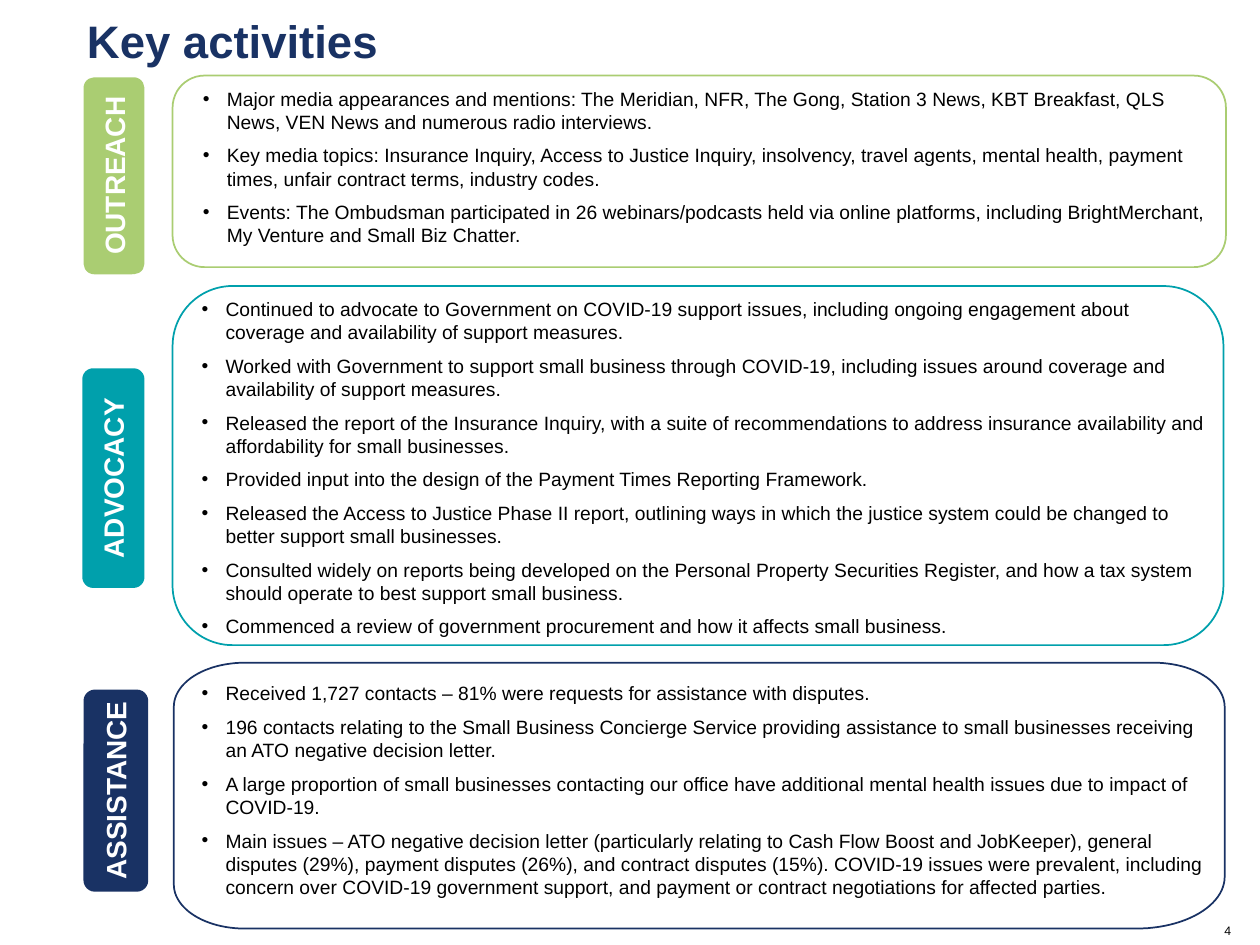
import math

import lxml.etree
import pptx
import pptx.dml.color
import pptx.enum.shapes
import pptx.enum.text
import pptx.oxml.ns
import pptx.util

PX = 9144
ROUND = pptx.enum.shapes.MSO_SHAPE.ROUNDED_RECTANGLE
ALIGN = pptx.enum.text.PP_ALIGN
ANCHOR = pptx.enum.text.MSO_ANCHOR
NAVY, TEAL, GREEN = "193264", "00A0AC", "AACD72"

OUTREACH = [
    "Major media appearances and mentions: The Meridian, NFR, The Gong, Station 3 News, KBT Breakfast, QLS News, VEN News and numerous radio interviews.",
    "Key media topics: Insurance Inquiry, Access to Justice Inquiry, insolvency, travel agents, mental health, payment times, unfair contract terms, industry codes.",
    "Events: The Ombudsman participated in 26 webinars/podcasts held via online platforms, including BrightMerchant, My Venture and Small Biz Chatter.",
]
ADVOCACY = [
    "Continued to advocate to Government on COVID-19 support issues, including ongoing engagement about \ncoverage and availability of support measures.",
    "Worked with Government to support small business through COVID-19, including issues around coverage and availability of support measures.",
    "Released the report of the Insurance Inquiry, with a suite of recommendations to address insurance availability and affordability for small businesses.",
    "Provided input into the design of the Payment Times Reporting Framework.",
    "Released the Access to Justice Phase II report, outlining ways in which the justice system could be changed to better support small businesses.",
    "Consulted widely on reports being developed on the Personal Property Securities Register, and how a tax system should operate to best support small business.",
    "Commenced a review of government procurement and how it affects small business.",
]
ASSISTANCE = [
    "Received 1,727 contacts – 81% were requests for assistance with disputes.",
    "196 contacts relating to the Small Business Concierge Service providing assistance to small businesses receiving an ATO negative decision letter.",
    "A large proportion of small businesses contacting our office have additional mental health issues due to impact of COVID-19.",
    "Main issues – ATO negative decision letter (particularly relating to Cash Flow Boost and JobKeeper), general disputes (29%), payment disputes (26%), and contract disputes (15%). COVID-19 issues were prevalent, including concern over COVID-19 government support, and payment or contract negotiations for affected parties.",
]


def rgb(value):
    """Return a colour from a hex string."""
    return pptx.dml.color.RGBColor.from_string(value)


def place(sp, box):
    """Move and size a shape to a box in px."""
    sp.left, sp.top, sp.width, sp.height = [n * PX for n in box]


def frame(sp, anchor=ANCHOR.TOP):
    """Prepare and return the text frame of a shape."""
    tf = sp.text_frame
    tf.word_wrap = True
    tf.auto_size = pptx.enum.text.MSO_AUTO_SIZE.NONE
    tf.vertical_anchor = anchor
    return tf


def write(p, text, size, color, bold=False, align=ALIGN.LEFT):
    """Write text into a paragraph, breaking lines at newlines."""
    p.alignment = align
    for i, part in enumerate(text.split("\n")):
        if i:
            p.add_line_break()
        r = p.add_run()
        r.text = part
        r.font.name = "Arial"
        r.font.size = pptx.util.Pt(size)
        r.font.bold = bold
        r.font.color.rgb = rgb(color)


def outline(sp, color, fill=None):
    """Give a shape its line and optional fill."""
    sp.shadow.inherit = False
    sp.line.color.rgb = rgb(color)
    sp.line.width = pptx.util.Pt(1)
    if fill:
        sp.fill.solid()
        sp.fill.fore_color.rgb = rgb(fill)
    else:
        sp.fill.background()


def add_label(s, text, box, color):
    """Add a filled tab with upward text centred on it."""
    x, y, w, h = box
    tab = s.shapes.add_shape(ROUND, 0, 0, 0, 0)
    place(tab, box)
    outline(tab, color, color)
    sp = s.shapes.add_textbox(0, 0, 0, 0)
    place(sp, (x + (w - h) // 2, y + (h - 37) // 2, h, 37))
    sp.rotation = 270
    tf = frame(sp, ANCHOR.MIDDLE)
    tf.margin_left = tf.margin_right = 0
    write(tf.paragraphs[0], text, 16, "FFFFFF", True, ALIGN.CENTER)


def add_panel(s, box, color):
    """Add a rounded outline panel."""
    sp = s.shapes.add_shape(ROUND, 0, 0, 0, 0)
    place(sp, box)
    outline(sp, color)


def add_uneven_panel(s, box, color):
    """Add an outline panel whose lower right corner is wider."""
    x, y, w, h = box
    corners = [
        (x + 56, y + 35, 56, 35),
        (x + w - 56, y + 35, 56, 35),
        (x + w - 70, y + h - 41, 70, 41),
        (x + 56, y + h - 35, 56, 35),
    ]
    points = []
    for i, (cx, cy, rx, ry) in enumerate(corners):
        for step in range(25):
            a = math.radians(180 + 90 * i + 90 * step / 24)
            points.append((round((cx + rx * math.cos(a)) * PX), round((cy + ry * math.sin(a)) * PX)))
    fb = s.shapes.build_freeform(*points[0])
    fb.add_line_segments(points[1:], close=True)
    outline(fb.convert_to_shape(), color)


def fill_list(sp, box, items):
    """Place a body placeholder and fill it with bullets."""
    place(sp, box)
    tf = frame(sp)
    for i, item in enumerate(items):
        p = tf.add_paragraph() if i else tf.paragraphs[0]
        pPr = p._p.get_or_add_pPr()
        pPr.set("marL", str(19 * PX))
        pPr.set("indent", str(-19 * PX))
        for tag, key, value in (("a:buFont", "typeface", "Arial"), ("a:buChar", "char", "•")):
            lxml.etree.SubElement(pPr, pptx.oxml.ns.qn(tag)).set(key, value)
        p.space_before = pptx.util.Pt(0)
        p.space_after = pptx.util.Pt(6)
        write(p, item, 11, "000000")


def add_section(s, body, name, items, color, tab, panel, text, draw=add_panel):
    """Add one activity: its panel, label and list."""
    draw(s, panel, color)
    add_label(s, name, tab, color)
    fill_list(body, text, items)


def add_page_number(s, box, number):
    """Add the page number."""
    sp = s.shapes.add_textbox(0, 0, 0, 0)
    place(sp, box)
    write(frame(sp).paragraphs[0], number, 7, "000000", align=ALIGN.CENTER)


def main():
    """Build and save the slide."""
    prs = pptx.Presentation()
    prs.slide_width, prs.slide_height = 1000 * PX, 750 * PX
    s = prs.slides.add_slide(prs.slide_layouts[4])
    title, first, second, spare, third = list(s.placeholders)
    spare.element.getparent().remove(spare.element)
    place(title, (59, 5, 400, 54))
    write(frame(title).paragraphs[0], "Key activities", 26, NAVY, True)
    add_section(s, first, "OUTREACH", OUTREACH, GREEN,
                (67, 62, 47, 155), (137, 60, 836, 152), (151, 64, 824, 138))
    add_section(s, second, "ADVOCACY", ADVOCACY, TEAL,
                (66, 293, 48, 173), (137, 227, 834, 285), (150, 231, 823, 310))
    add_section(s, third, "ASSISTANCE", ASSISTANCE, NAVY,
                (67, 548, 50, 159), (138, 526, 834, 211), (150, 536, 821, 183),
                add_uneven_panel)
    add_page_number(s, (949, 728, 51, 22), "4")
    prs.save("out.pptx")


if __name__ == "__main__":
    main()
